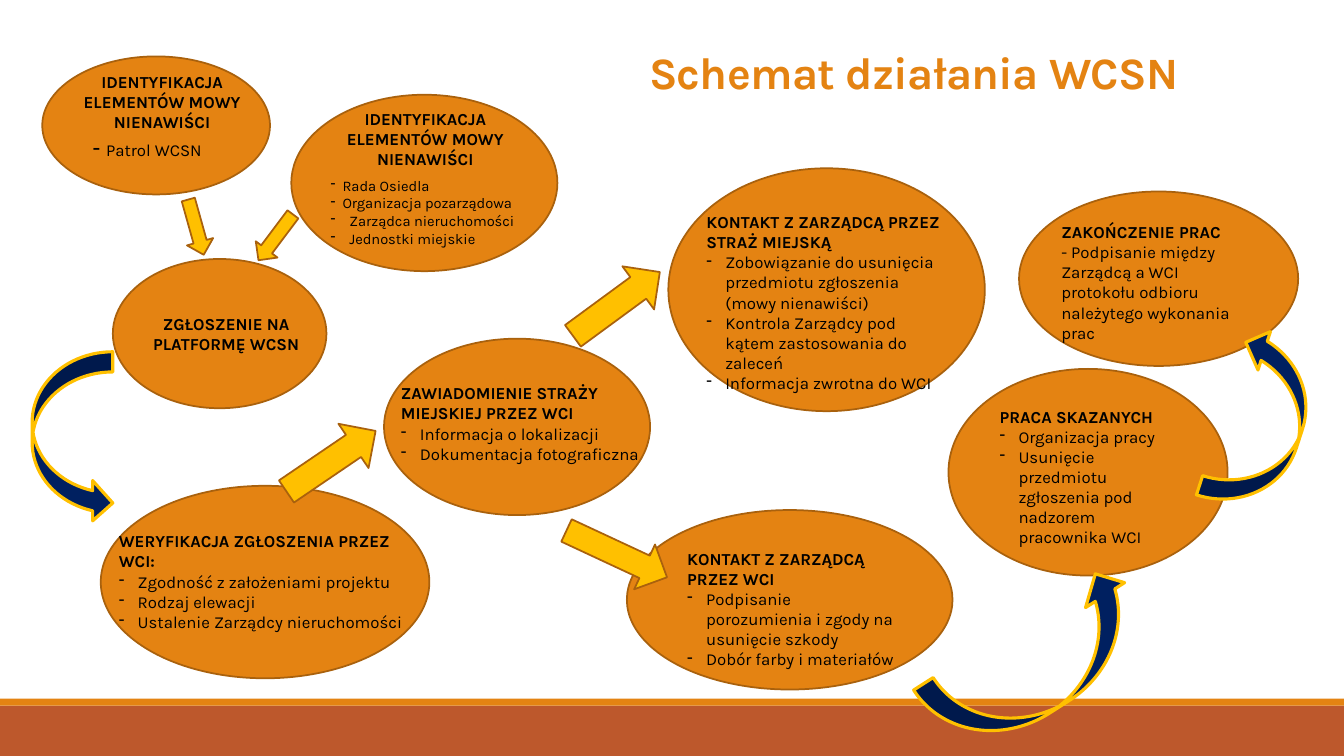
import pptx
import pptx.util
import pptx.dml.color
import pptx.enum.shapes
import pptx.enum.text
import pptx.oxml.ns
from lxml import etree

Pt = pptx.util.Pt
FORM = pptx.enum.shapes.MSO_SHAPE
ALIGN = pptx.enum.text.PP_ALIGN
ORANGE, BROWN, RUST = "E48312", "A9610D", "BD582C"
GOLD, NAVY = "FFC000", "002060"


def color(code):
    return pptx.dml.color.RGBColor.from_string(code)


def shape(slide, form, box, fill, line=None, width=1.25, turn=0):
    item = slide.shapes.add_shape(form, *map(Pt, box))
    item.shadow.inherit = False
    item.rotation = turn
    item.fill.solid()
    item.fill.fore_color.rgb = color(fill)
    if line:
        item.line.color.rgb = color(line)
        item.line.width = Pt(width)
    else:
        item.line.fill.background()
    return item


def frame(slide, box):
    body = slide.shapes.add_textbox(*map(Pt, box)).text_frame
    body.word_wrap = True
    return body


def write(body, text, size=12, bold=False, fill="000000", align=ALIGN.LEFT,
          hang=0, font="Karla"):
    """Add a paragraph; a hang makes it a dash bullet."""
    para = body.paragraphs[0]
    if para.runs:
        para = body.add_paragraph()
    para.alignment = align
    if hang:
        props = para._p.get_or_add_pPr()
        props.set("marL", str(Pt(hang)))
        props.set("indent", str(-Pt(hang)))
        mark = etree.SubElement(props, pptx.oxml.ns.qn("a:buChar"))
        mark.set("char", "-")
    add_run(para, text, size, bold, fill, font)
    return para


def add_run(para, text, size, bold, fill, font):
    run = para.add_run()
    run.text = text
    run.font.size = Pt(size)
    run.font.bold = bold
    run.font.name = font
    run.font.color.rgb = color(fill)
    return run


def node(slide, box, inset, head, items=(), align=ALIGN.LEFT):
    """Draw an ellipse with text placed at inset (dx, dy, width, height)."""
    shape(slide, FORM.OVAL, box, ORANGE, BROWN)
    left, top = box[:2]
    dx, dy, wide, high = inset
    body = frame(slide, (left + dx, top + dy, wide, high))
    write(body, head, bold=True, align=align)
    for item in items:
        write(body, item, hang=13.5)
    return body


def source(slide, box, inset):
    """Draw a starting ellipse and return the frame for its list."""
    node(slide, box, inset, "IDENTYFIKACJA ELEMENTÓW MOWY NIENAWIŚCI",
         align=ALIGN.CENTER)
    left, top, wide, high = box
    return frame(slide, (left + 20.9, top + high * 0.435 + 6.8 * (wide < 180),
                         wide - 23, high * 0.5))


def base(slide):
    # Bottom bands and title
    shape(slide, FORM.RECTANGLE, (0, 504, 960, 36), RUST)
    shape(slide, FORM.RECTANGLE, (0, 499, 960, 5), ORANGE)
    body = frame(slide, (260.6, 6.5, 784.1, 67.7))
    body.vertical_anchor = pptx.enum.text.MSO_ANCHOR.BOTTOM
    para = write(body, "Schemat działania WCSN", size=32, bold=True,
                 fill=ORANGE, align=ALIGN.CENTER)
    para.line_spacing = 0.85
    para.runs[0].font._element.set("spc", "-50")


def steps(slide):
    # Report, check and notice
    node(slide, (80.6, 185, 152.6, 106.6), (10.8, 35.3, 140.4, 36),
         "ZGŁOSZENIE NA PLATFORMĘ WCSN", align=ALIGN.CENTER)
    node(slide, (72, 347, 234.7, 137.5), (5.8, 28.8, 234.7, 80),
         "WERYFIKACJA ZGŁOSZENIA PRZEZ WCI:",
         ["Zgodność z założeniami projektu", "Rodzaj elewacji",
          "Ustalenie Zarządcy nieruchomości"])
    node(slide, (274.3, 241.9, 190.1, 126), (5, 28.1, 186.5, 65.5),
         "ZAWIADOMIENIE STRAŻY MIEJSKIEJ PRZEZ WCI",
         ["Informacja o lokalizacji", "Dokumentacja fotograficzna"])
    # Contact with the manager
    node(slide, (447.8, 364.3, 232.6, 128.2), (36, 23.8, 164.2, 94.3),
         "KONTAKT Z ZARZĄDCĄ PRZEZ WCI",
         ["Podpisanie porozumienia i zgody na usunięcie szkody",
          "Dobór farby i materiałów"])
    node(slide, (477.4, 120.2, 226.1, 173.5), (20.1, 27.4, 186.5, 123.8),
         "KONTAKT Z ZARZĄDCĄ PRZEZ STRAŻ MIEJSKĄ",
         ["Zobowiązanie do usunięcia przedmiotu zgłoszenia (mowy nienawiści)",
          "Kontrola Zarządcy pod kątem zastosowania do zaleceń",
          "Informacja zwrotna do WCI"])
    # Work and its end
    node(slide, (677.5, 263.5, 199.4, 147.6), (29.5, 23.1, 141.1, 121.7),
         "PRACA SKAZANYCH",
         ["Organizacja pracy",
          "Usunięcie przedmiotu zgłoszenia pod nadzorem pracownika WCI"])
    body = node(slide, (727.9, 136.8, 199.4, 124.6), (23.1, 18, 150.5, 94.3),
                "ZAKOŃCZENIE PRAC")
    write(body, "- Podpisanie między Zarządcą a WCI protokołu odbioru "
                "należytego wykonania prac")


def sources(slide):
    # Who spots the hate speech
    body = source(slide, (208.1, 67.7, 190.1, 126), (14.4, 6.5, 162.7, 51.1))
    for item, hang in [("Rada Osiedla", 8.6), ("Organizacja pozarządowa", 8.6),
                       ("Zarządca nieruchomości", 13.5),
                       ("Jednostki miejskie", 13.5)]:
        write(body, item, size=10.5, hang=hang)
    body = source(slide, (30.2, 40.3, 162.7, 98.6), (4.3, 7.2, 162.7, 51.1))
    para = write(body, "- ", size=18, font="Calibri")
    para._p.get_or_add_pPr().set("marL", str(Pt(8)))
    add_run(para, "Patrol WCSN", 12, False, "000000", "Karla")


def arrows(slide):
    # Straight arrows
    for box, turn in [((198, 310.3, 77, 38.2), 325.8),
                      ((401.8, 198, 77, 38.2), 323.7),
                      ((401, 378, 79.2, 35.3), 25),
                      ((119.5, 152.6, 41, 19.4), 74.4),
                      ((176.4, 159.8, 41, 19.4), 126.9)]:
        shape(slide, FORM.RIGHT_ARROW, box, GOLD, BROWN, turn=turn)
    # Curved arrows
    for form, box, turn in [
            (FORM.CURVED_RIGHT_ARROW, (23, 251.3, 57.6, 122.4), 0),
            (FORM.CURVED_RIGHT_ARROW, (709.2, 389.5, 66.2, 170.6), 237.4),
            (FORM.CURVED_UP_ARROW, (837.4, 272.2, 128.9, 57.6), 287.9)]:
        shape(slide, form, box, NAVY, GOLD, 2.25, turn)


def main():
    deck = pptx.Presentation()
    deck.slide_width, deck.slide_height = Pt(960), Pt(540)
    slide = deck.slides.add_slide(deck.slide_layouts[6])
    for part in (base, steps, sources, arrows):
        part(slide)
    deck.save("out.pptx")


if __name__ == "__main__":
    main()
